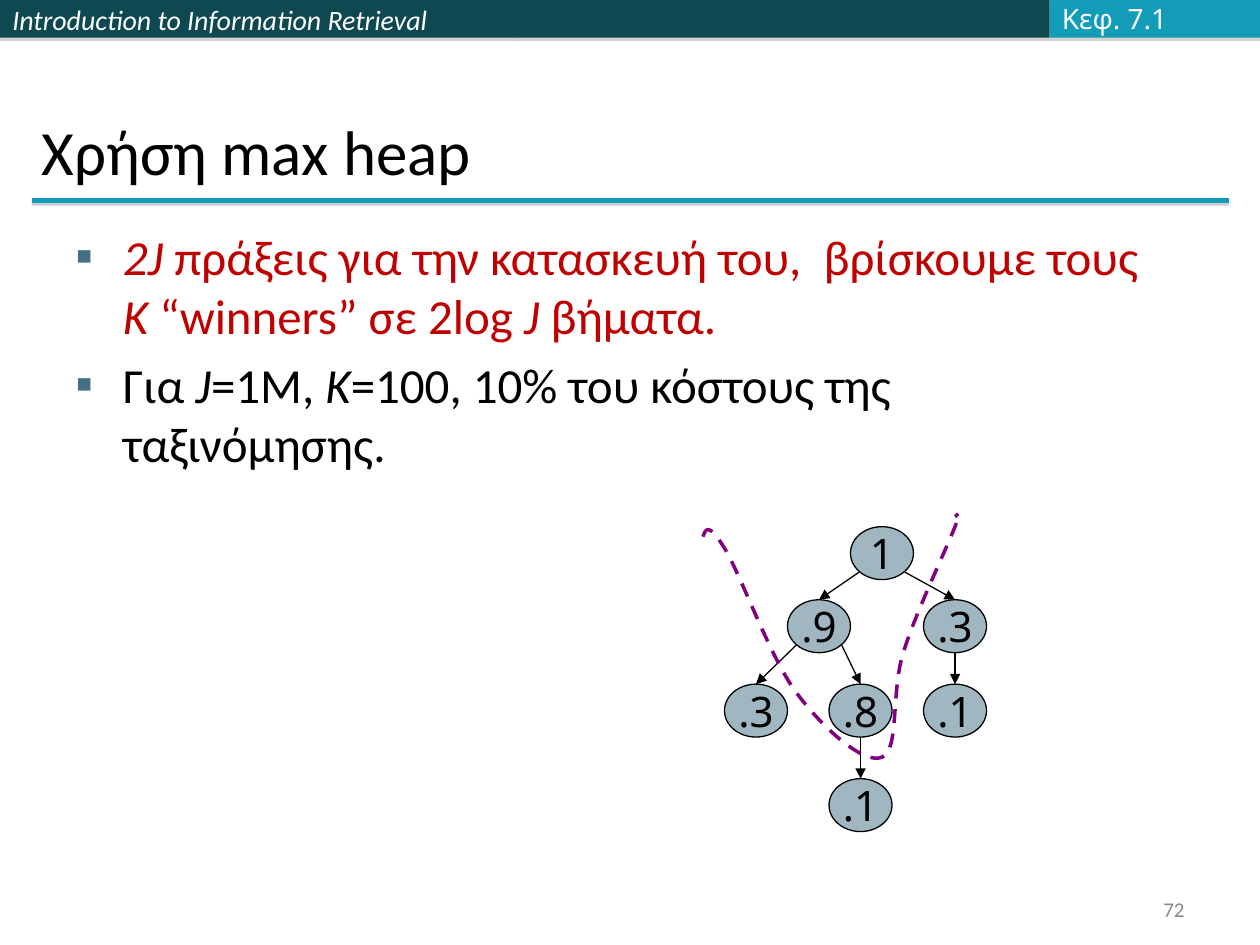
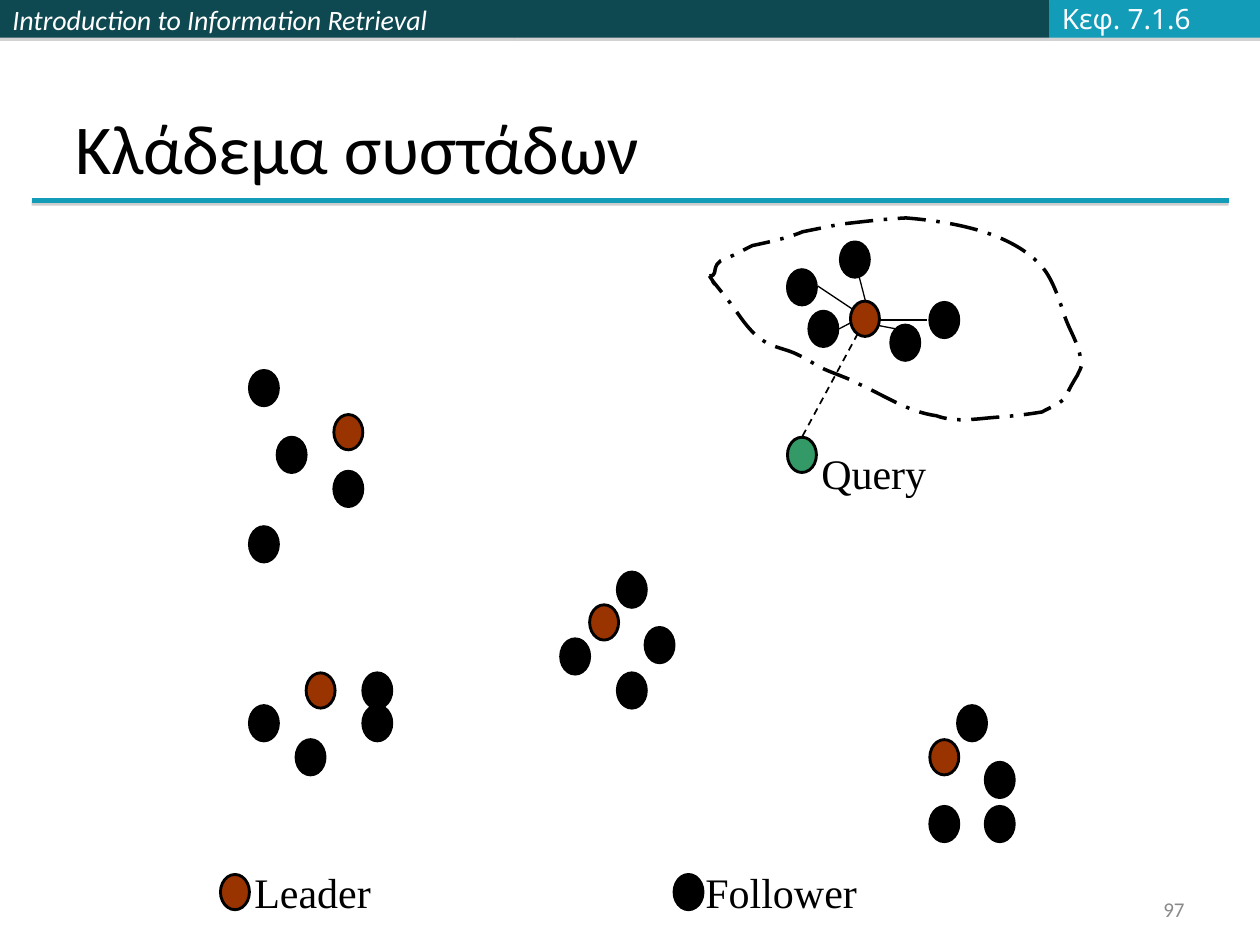
from lxml import etree
from pptx import Presentation
from pptx.dml.color import RGBColor
from pptx.enum.dml import MSO_LINE
from pptx.enum.shapes import MSO_CONNECTOR, MSO_SHAPE
from pptx.enum.text import MSO_ANCHOR, MSO_AUTO_SIZE, PP_ALIGN
from pptx.oxml.ns import qn
from pptx.util import Inches, Pt

OVAL, RECTANGLE = MSO_SHAPE.OVAL, MSO_SHAPE.RECTANGLE
STRAIGHT = MSO_CONNECTOR.STRAIGHT
DASH, LONG_DASH_DOT = MSO_LINE.DASH, MSO_LINE.LONG_DASH_DOT
TOP, MIDDLE, BOTTOM = MSO_ANCHOR.TOP, MSO_ANCHOR.MIDDLE, MSO_ANCHOR.BOTTOM
LEFT, CENTER, RIGHT = PP_ALIGN.LEFT, PP_ALIGN.CENTER, PP_ALIGN.RIGHT
NO_AUTOFIT = MSO_AUTO_SIZE.NONE

DARK_TEAL, TEAL, SLATE = "0E4851", "139CB7", "437085"
BLACK, WHITE, PALE, GRAY = "000000", "FFFFFF", "FBFCFF", "898989"
RED, PURPLE, LEADER, QUERY = "C00000", "800080", "993300", "339966"
SANS, HUMANIST, SERIF = "Calibri", "Noto Sans", "Times New Roman"

NODE_WIDTH, NODE_HEIGHT = 0.5, 0.42
DOT_WIDTH, DOT_HEIGHT = 0.23, 0.28

HEAP_NODES = [("1", 1.17, 0.18), (".9", 0.67, 0.76), (".3", 1.75, 0.76),
              (".3", 0.17, 1.43), (".8", 1, 1.43), (".1", 1.75, 1.43), (".1", 1, 2.18)]
HEAP_EDGES = [(0, 1), (0, 2), (1, 3), (1, 4), (2, 5), (4, 6)]
HEAP_CUT = [
    (0, 0.26), (0.02, 0.2), (0.04, 0.14), (0.17, 0.35), (0.3, 0.56), (0.54, 1.24), (0.75, 1.51),
    (0.96, 1.79), (1.28, 2.07), (1.42, 2.01), (1.56, 1.96), (1.49, 1.49), (1.59, 1.18),
    (1.68, 0.88), (1.93, 0.36), (2, 0.18), (2.07, 0), (2, 0.11), (2, 0.1)]

CLUSTERS = [
    ((1.98, 2.94), (0.67, 0.35), [(0, 0), (0.22, 0.53), (0.67, 0.8), (0, 1.24)]),
    ((1.98, 5.34), (0.45, 0), [(0, 0.26), (0.37, 0.53), (0.9, 0.26), (0.9, 0)]),
    ((4.45, 4.54), (0.23, 0.26), [(0.45, 0), (0.67, 0.44), (0.45, 0.8), (0, 0.53)]),
    ((7.38, 5.6), (0, 0.27), [(0.22, 0), (0.44, 0.45), (0, 0.8), (0.44, 0.8)]),
]
NEAREST_LEADER = (1.25, 0.69)
NEAREST_FOLLOWERS = [(0.75, 0.44), (0.92, 0.77), (1.57, 0.88), (1.88, 0.7), (1.17, 0.22)]
SPOKES = [((1.4, 0.87), (1.61, 0.91)), ((1.42, 0.84), (1.86, 0.84)),
          ((1.4, 0.81), (1.32, 0.5)), ((1.35, 0.81), (0.99, 0.57)),
          ((1.35, 0.81), (1.16, 0.91))]
NEAREST_OUTLINE = [
    (0.13, 0.49), (0.26, 0.68), (0.04, 0.38), (0.26, 0.66),
    (0.36, 0.78), (0.42, 0.91), (0.55, 1), (0.63, 1.06), (0.75, 1.07), (0.84, 1.12),
    (0.91, 1.15), (0.97, 1.2), (1.04, 1.23), (1.13, 1.27), (1.23, 1.3), (1.32, 1.35),
    (1.52, 1.44), (1.71, 1.57), (1.93, 1.6), (2.1, 1.66), (2.26, 1.62), (2.44, 1.61),
    (2.56, 1.6), (2.65, 1.59), (2.77, 1.57), (2.84, 1.53), (2.91, 1.51), (2.96, 1.45),
    (2.98, 1.39), (3.05, 1.28), (3.05, 1.28), (3.06, 1.25), (3.09, 1.22), (3.08, 1.18),
    (3.07, 1.04), (2.99, 0.93), (2.95, 0.81), (2.91, 0.69), (2.86, 0.53), (2.78, 0.43),
    (2.54, 0.14), (2.05, 0.06), (1.69, 0.03), (1.5, 0.04), (1.35, 0.06), (1.17, 0.08),
    (1.07, 0.1), (0.97, 0.12), (0.87, 0.14), (0.75, 0.19), (0.61, 0.22), (0.47, 0.25),
    (0.39, 0.29), (0.3, 0.34), (0.22, 0.37), (0.21, 0.39), (0.19, 0.39), (0.19, 0.4),
    (0.16, 0.45), (0.19, 0.49), (0.13, 0.49)]


def color(hex_text):
    """Turn a hex string into a colour."""
    return RGBColor.from_string(hex_text)


def child(parent, tag, **values):
    """Append a DrawingML element with the given attributes."""
    return etree.SubElement(parent, qn(tag), values)


def shift(points, left, top):
    """Move points from box coordinates to slide coordinates."""
    return [(left + x, top + y) for x, y in points]


def set_values(target, values):
    """Set attributes from a dict of format values."""
    for name, value in values.items():
        setattr(target, name, value)


def place(shape, box):
    """Put a shape at left, top, width, height in inches."""
    set_values(shape, dict(zip(("left", "top", "width", "height"), map(Inches, box))))


def add_span(para, text, size, font, hex_text, italic=False):
    """Add a formatted run to a paragraph."""
    span = para.add_run()
    span.text = text
    set_values(span.font, {"size": Pt(size), "name": font, "italic": italic})
    span.font.color.rgb = color(hex_text)


def write(shape, text, size, font, hex_text, italic=False,
          align=LEFT, anchor=TOP, wrap=True):
    """Write one formatted line into a shape."""
    frame = shape.text_frame
    set_values(frame, {"word_wrap": wrap, "vertical_anchor": anchor,
                       "auto_size": NO_AUTOFIT})
    para = frame.paragraphs[0]
    para.alignment = align
    add_span(para, text, size, font, hex_text, italic)


def add_label(slide, box, *text_format, **layout):
    """Add a text box with one formatted line."""
    write(slide.shapes.add_textbox(*map(Inches, box)), *text_format, **layout)


def set_line(line, hex_text, width, dash=None):
    """Format a line or an outline."""
    line.color.rgb = color(hex_text)
    set_values(line, {"width": Pt(width), "dash_style": dash})


def add_solid(slide, kind, box, fill, line=None):
    """Add a filled preset shape, outlined in black if a width is given."""
    shape = slide.shapes.add_shape(kind, *map(Inches, box))
    shape.shadow.inherit = False
    shape.fill.solid()
    shape.fill.fore_color.rgb = color(fill)
    if line:
        set_line(shape.line, BLACK, line)
    else:
        shape.line.fill.background()
    return shape


def add_line(slide, start, end, hex_text=BLACK, width=0.75, dash=None, arrow=False):
    """Add a straight connector without a shadow."""
    line = slide.shapes.add_connector(STRAIGHT, *map(Inches, (*start, *end)))
    set_line(line.line, hex_text, width, dash)
    properties = line._element.spPr
    if arrow:
        child(properties.find(qn("a:ln")), "a:tailEnd", type="triangle")
    child(properties, "a:effectLst")
    return line


def drop_shadow(shape, distance, opacity):
    """Give a shape a hard gray shadow straight below it."""
    effects = shape._element.spPr.find(qn("a:effectLst"))
    shadow = child(effects, "a:outerShdw", dist=str(Pt(distance)),
                   dir="5400000", rotWithShape="0")
    tint = child(shadow, "a:srgbClr", val="808080")
    child(tint, "a:alpha", val=str(opacity * 1000))


def add_curve(slide, points, hex_text, dash, close=False):
    """Draw a chain of cubic curves as an unfilled freeform."""
    start, *rest = [tuple(map(Inches, point)) for point in points]
    builder = slide.shapes.build_freeform(*start)
    builder.add_line_segments(rest, close=close)
    curve = builder.convert_to_shape()
    steps = list(curve._element.iter(qn("a:lnTo")))
    for first, *others in zip(steps[::3], steps[1::3], steps[2::3]):
        first.tag = qn("a:cubicBezTo")
        for step in others:
            first.append(step[0])
            step.getparent().remove(step)
    curve.shadow.inherit = False
    curve.fill.background()
    set_line(curve.line, hex_text, 2, dash)


def move_bands_to_master(deck, slide):
    """Draw the header bands and title rule, and hand them to the master."""
    bands = [add_solid(slide, RECTANGLE, (left, 0, width, 0.3), fill)
             for left, width, fill in ((0, 4.08, DARK_TEAL), (4.08, 4.25, DARK_TEAL),
                                       (8.33, 1.67, TEAL))]
    for band in bands:
        drop_shadow(band, 1.8, 35)
    write(bands[0], "Introduction to Information Retrieval", 16, SANS, WHITE,
          italic=True, anchor=MIDDLE)
    rule = add_line(slide, (0.25, 1.59), (9.75, 1.59), TEAL, 3)
    drop_shadow(rule, 1.6, 38)
    for number, shape in enumerate([*bands, rule], 20):
        shape._element.xpath(".//p:cNvPr")[0].set("id", str(number))
        deck.slide_master.shapes._spTree.append(shape._element)


def add_frame(deck, layout, chapter, title, title_box, title_size, number):
    """Add a slide with its chapter, title and page number."""
    slide = deck.slides.add_slide(deck.slide_layouts[layout])
    add_label(slide, (8.33, -0.04, 1.31, 0.37), chapter, 16, HUMANIST, PALE,
              anchor=MIDDLE, wrap=False)
    place(slide.shapes.title, title_box)
    write(slide.shapes.title, title, title_size, SANS, BLACK, anchor=BOTTOM)
    add_label(slide, (7.17, 7.08, 2.33, 0.27), number, 12, SANS, GRAY,
              align=RIGHT, anchor=MIDDLE)
    return slide


def fill_list(body, box, items):
    """Fill the body placeholder with square-bulleted items."""
    place(body, box)
    frame = body.text_frame
    frame.auto_size = NO_AUTOFIT
    for index, (hex_text, spans) in enumerate(items):
        para = frame.add_paragraph() if index else frame.paragraphs[0]
        properties = para._p.get_or_add_pPr()
        set_values(properties, {"marL": Inches(0.38), "indent": Inches(-0.38)})
        child(child(properties, "a:buClr"), "a:srgbClr", val=SLATE)
        child(properties, "a:buFont", typeface=SANS)
        child(properties, "a:buChar", char="▪")
        for text, italic in spans:
            add_span(para, text, 28, SANS, hex_text, italic)


def add_heap(slide, left, top):
    """Draw the heap with its arrows and the dashed cut."""
    corners = shift([node[1:] for node in HEAP_NODES], left, top)
    for (value, *_), corner in zip(HEAP_NODES, corners):
        node = add_solid(slide, OVAL, (*corner, NODE_WIDTH, NODE_HEIGHT), SLATE, 0.75)
        child(node._element.spPr.find(qn("a:solidFill"))[0], "a:alpha", val="50000")
        write(node, value, 24, HUMANIST, BLACK, align=CENTER, anchor=MIDDLE, wrap=False)
    for parent, kid in HEAP_EDGES:
        (x, y), (kid_x, kid_y) = corners[parent], corners[kid]
        only_child = x == kid_x
        side = 0 if only_child else 0.18 if kid_x > x else -0.18
        start_y = y + (NODE_HEIGHT if only_child else 0.36)
        add_line(slide, (x + NODE_WIDTH / 2 + side, start_y),
                 (kid_x + NODE_WIDTH / 2, kid_y), arrow=True)
    add_curve(slide, shift(HEAP_CUT, left, top), PURPLE, DASH)


def add_dot(slide, corner, fill):
    """Draw one document dot."""
    add_solid(slide, OVAL, (*corner, DOT_WIDTH, DOT_HEIGHT), fill, 1.63)


def add_cluster(slide, origin, leader, followers):
    """Draw followers and their leader relative to an origin."""
    for corner in shift(followers, *origin):
        add_dot(slide, corner, BLACK)
    add_dot(slide, *shift([leader], *origin), LEADER)


def add_nearest_cluster(slide, left, top):
    """Draw the outlined cluster nearest to the query."""
    for spoke in SPOKES:
        add_line(slide, *shift(spoke, left, top))
    add_line(slide, *shift([(0.87, 1.76), (1.35, 0.87)], left, top), width=1, dash=DASH)
    add_curve(slide, shift(NEAREST_OUTLINE, left, top), BLACK, LONG_DASH_DOT, close=True)
    add_cluster(slide, (left, top), NEAREST_LEADER, NEAREST_FOLLOWERS)
    add_dot(slide, (left + 0.75, top + 1.77), QUERY)
    add_label(slide, (left + 0.92, top + 1.8, 1.03, 0.5), "Query", 24, SERIF, BLACK, wrap=False)


def add_legend(slide, left, top):
    """Draw the legend of leader and follower dots."""
    for dot, label, fill, name, width in ((0, 0.17, LEADER, "Leader", 1.12),
                                          (3.6, 3.75, BLACK, "Follower", 1.4)):
        add_dot(slide, (left + dot, top + 0.11), fill)
        add_label(slide, (left + label, top, width, 0.5), name, 24, SERIF, BLACK, wrap=False)


def add_heap_slide(deck):
    """Build the slide about the max heap."""
    slide = add_frame(deck, 1, "Κεφ. 7.1", "Χρήση max heap", (0.23, 0.01, 9.77, 1.53), 36, "72")
    fill_list(slide.placeholders[1], (0.5, 1.75, 8.67, 2.5), [
        (RED, [("2J ", True), ("πράξεις για την κατασκευή του,  βρίσκουμε τους ", False),
               ("K ", True), ("“winners” σε 2log ", False), ("J ", True), ("βήματα.", False)]),
        (BLACK, [("Για ", False), ("J", True), ("=1M, ", False), ("K", True),
                 ("=100, 10% του κόστους της ταξινόμησης.", False)])])
    add_heap(slide, 5.58, 4)
    return slide


def add_cluster_slide(deck):
    """Build the slide about cluster pruning."""
    slide = add_frame(deck, 5, "Κεφ. 7.1.6", "Κλάδεμα συστάδων", (0.5, 0.42, 9, 1.13), 40, "97")
    for cluster in CLUSTERS:
        add_cluster(slide, *cluster)
    add_nearest_cluster(slide, 5.5, 1.7)
    add_legend(slide, 1.75, 6.83)


def main():
    """Build and save the deck."""
    deck = Presentation()
    set_values(deck, {"slide_width": Inches(10), "slide_height": Inches(7.5)})
    move_bands_to_master(deck, add_heap_slide(deck))
    add_cluster_slide(deck)
    deck.save("out.pptx")


if __name__ == "__main__":
    main()
